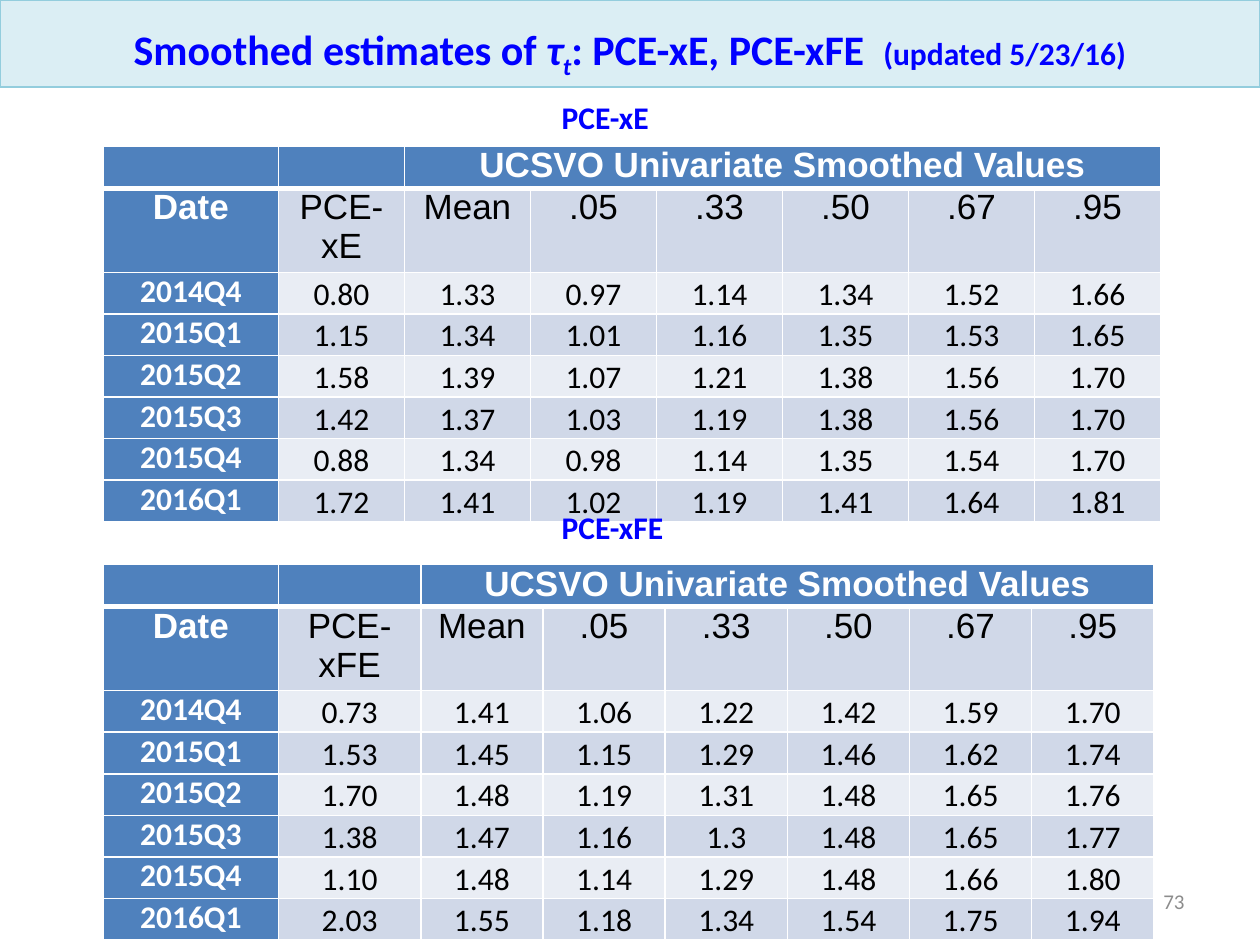
from lxml import etree
from pptx import Presentation
from pptx.dml.color import RGBColor
from pptx.enum.shapes import MSO_SHAPE
from pptx.enum.text import MSO_ANCHOR, MSO_AUTO_SIZE, PP_ALIGN
from pptx.oxml.ns import qn
from pptx.util import Inches, Pt

RECT = MSO_SHAPE.RECTANGLE
TOP, MIDDLE, BOTTOM = MSO_ANCHOR.TOP, MSO_ANCHOR.MIDDLE, MSO_ANCHOR.BOTTOM
CENTER, RIGHT = PP_ALIGN.CENTER, PP_ALIGN.RIGHT
GROW = MSO_AUTO_SIZE.SHAPE_TO_FIT_TEXT
BLUE, HEADER, WHITE, BLACK = "0000FF", "4F81BD", "FFFFFF", "000000"
BANDS = ["E9EDF4", "D0D8E8"]


def rgb(color):
    return RGBColor.from_string(color)


def style(r, size, color, bold=False, name="Calibri"):
    r.font.size = Pt(size)
    r.font.name = name
    r.font.bold = bold
    r.font.color.rgb = rgb(color)


prs = Presentation()
prs.slide_width, prs.slide_height = Inches(10), Inches(7.5)
s = prs.slides.add_slide(prs.slide_layouts[6])

sp = s.shapes.add_textbox(Inches(7.17), Inches(6.95), Inches(2.33), Inches(0.4))
tf = sp.text_frame
tf.word_wrap = True
tf.vertical_anchor = MIDDLE
tf.text = "73"
p = tf.paragraphs[0]
p.alignment = RIGHT
style(p.runs[0], 12, "8C8C8C")

sp = s.shapes.add_shape(RECT, 0, 0, Inches(10), Inches(0.69))
sp.shadow.inherit = False
sp.fill.solid()
sp.fill.fore_color.rgb = rgb("DBEEF4")
sp.line.color.rgb = rgb("93CDDD")
sp.line.width = Pt(0)
tf = sp.text_frame
tf.word_wrap = True
tf.vertical_anchor = BOTTOM
p = tf.paragraphs[0]
p.alignment = CENTER
for text, size, italic, baseline in [
    ("Smoothed estimates of ", 24, False, 0),
    ("τ", 24, True, 0),
    ("t", 24, True, -25000),
    (": PCE-xE, PCE-xFE  ", 24, False, 0),
    ("(updated 5/23/16)", 18, False, 0),
]:
    r = p.add_run()
    r.text = text
    style(r, size, BLUE, True)
    r.font.italic = italic
    if baseline:
        r._r.get_or_add_rPr().set("baseline", str(baseline))

dates = ["2014Q4", "2015Q1", "2015Q2", "2015Q3", "2015Q4", "2016Q1"]
measures = [
    ("PCE-xE", 0.73, 1.16, 1, 1, 0.33, [
        "0.80 1.33 0.97 1.14 1.34 1.52 1.66",
        "1.15 1.34 1.01 1.16 1.35 1.53 1.65",
        "1.58 1.39 1.07 1.21 1.38 1.56 1.70",
        "1.42 1.37 1.03 1.19 1.38 1.56 1.70",
        "0.88 1.34 0.98 1.14 1.35 1.54 1.70",
        "1.72 1.41 1.02 1.19 1.41 1.64 1.81",
    ]),
    ("PCE-xFE", 3.98, 4.48, 1.13, 0.97, 0.66, [
        "0.73 1.41 1.06 1.22 1.42 1.59 1.70",
        "1.53 1.45 1.15 1.29 1.46 1.62 1.74",
        "1.70 1.48 1.19 1.31 1.48 1.65 1.76",
        "1.38 1.47 1.16 1.3 1.48 1.65 1.77",
        "1.10 1.48 1.14 1.29 1.48 1.66 1.80",
        "2.03 1.55 1.18 1.34 1.54 1.75 1.94",
    ]),
]

for label, label_top, table_top, value_width, stat_width, names_height, values in measures:
    rows = [["", "", "UCSVO Univariate Smoothed Values", "", "", "", "", ""],
            ["Date", label, "Mean", ".05", ".33", ".50", ".67", ".95"]]
    rows += [[date] + line.split() for date, line in zip(dates, values)]
    table = s.shapes.add_table(len(rows), len(rows[0]), Inches(0.82), Inches(table_top),
                               Inches(8.36), Inches(2.65)).table
    for col, width in zip(table.columns, [1.39, value_width] + [stat_width] * 6):
        col.width = Inches(width)
    for row in table.rows:
        row.height = Inches(0.33)
    table.rows[1].height = Inches(names_height)
    table.cell(0, 2).merge(table.cell(0, 7))

    for i, row in enumerate(rows):
        for j, text in enumerate(row):
            cell = table.cell(i, j)
            is_header = i == 0 or j == 0
            is_value = i > 1 and j > 0
            cell.margin_left = cell.margin_right = Inches(0.01 if is_value else 0.07)
            cell.margin_top = Inches(0.01 if is_value else 0)
            cell.margin_bottom = 0
            cell.vertical_anchor = BOTTOM if is_value else TOP
            tcPr = cell._tc.get_or_add_tcPr()
            for side in "LRTB":
                thick = (i, side) in [(0, "B"), (1, "T")]
                ln = etree.SubElement(tcPr, qn(f"a:ln{side}"), w=str(Pt(3 if thick else 1)))
                line_fill = etree.SubElement(ln, qn("a:solidFill"))
                etree.SubElement(line_fill, qn("a:srgbClr"), val=WHITE)
            cell.fill.solid()
            cell.fill.fore_color.rgb = rgb(HEADER if is_header else BANDS[i % 2])
            if text:
                cell.text_frame.text = text
                p = cell.text_frame.paragraphs[0]
                p.alignment = CENTER
                style(p.runs[0], 20 if i < 2 else 18, WHITE if is_header else BLACK,
                      is_header, "Arial" if i < 2 else "Calibri")

    sp = s.shapes.add_textbox(Inches(4.36), Inches(label_top), Inches(1.27), Inches(0.4))
    tf = sp.text_frame
    tf.word_wrap = True
    tf.auto_size = GROW
    tf.text = label
    style(tf.paragraphs[0].runs[0], 18, BLUE, True)

prs.save("out.pptx")
